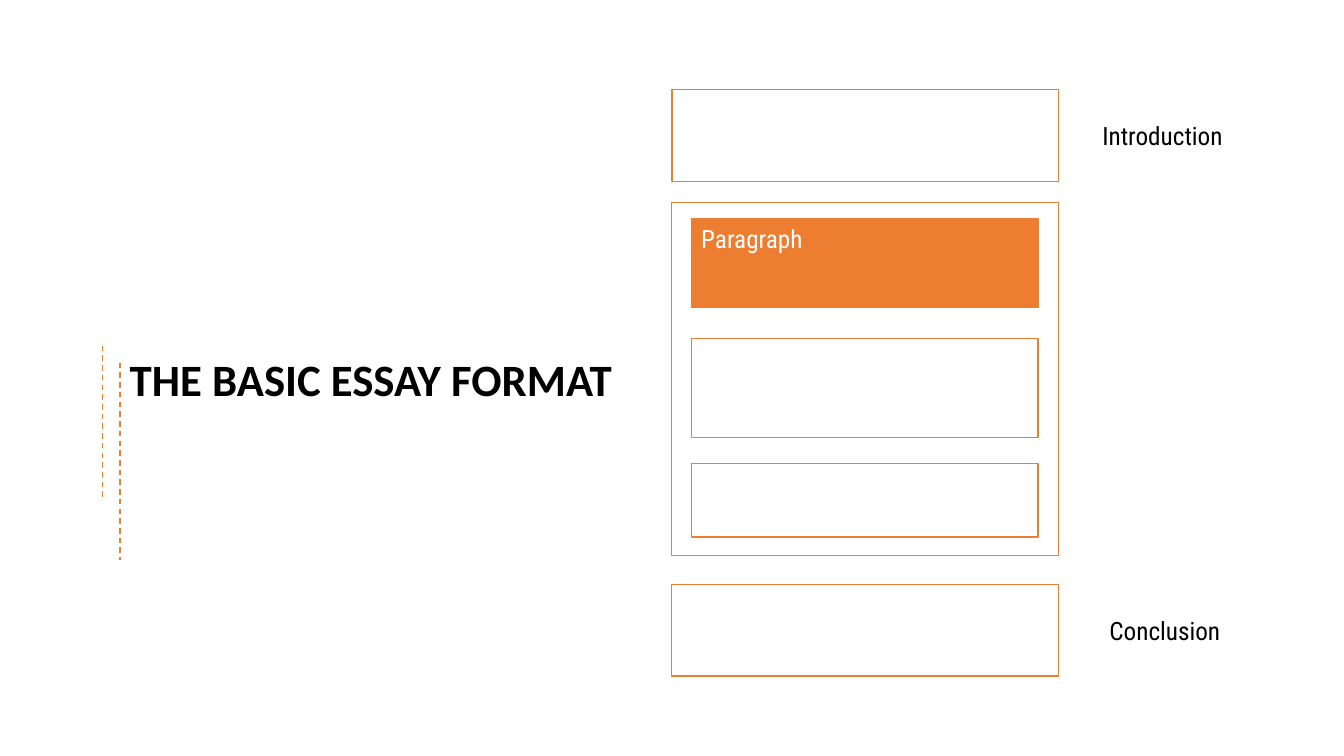
from dataclasses import dataclass

from lxml.etree import SubElement
from pptx import Presentation
from pptx.dml.color import RGBColor
from pptx.enum.dml import MSO_LINE
from pptx.enum.shapes import MSO_CONNECTOR, MSO_SHAPE
from pptx.enum.text import MSO_AUTO_SIZE
from pptx.oxml.ns import qn
from pptx.util import Cm, Pt


@dataclass(frozen=True)
class Theme:
    accent: RGBColor = RGBColor(0xED, 0x7D, 0x31)
    ink: RGBColor = RGBColor(0, 0, 0)
    paper: RGBColor = RGBColor(0xFF, 0xFF, 0xFF)
    title_font: str = "Calibri"
    label_font: str = "Roboto Condensed"
    title_size: Pt = Pt(32)
    label_size: Pt = Pt(18)
    line_width: Pt = Pt(1)


def set_values(target, values):
    for name, value in values.items():
        setattr(target, name, value)


class EssaySlide:
    """Holds the theme and the page that elements are added to."""

    def __init__(self, page, theme):
        self.page = page
        self.theme = theme

    def frame(self, left, top, width, height, fill=None):
        box = self.page.shapes.add_shape(
            MSO_SHAPE.RECTANGLE, Cm(left), Cm(top), Cm(width), Cm(height))
        box.shadow.inherit = False
        box.fill.solid()
        box.fill.fore_color.rgb = fill or self.theme.paper
        self.outline(box.line)

    def outline(self, line):
        line.color.rgb = self.theme.accent
        line.width = self.theme.line_width

    def text(self, words, left, top, width, height, color, **font_values):
        box = self.page.shapes.add_textbox(Cm(left), Cm(top), Cm(width), Cm(height))
        set_values(box.text_frame,
                   {"word_wrap": True, "auto_size": MSO_AUTO_SIZE.SHAPE_TO_FIT_TEXT})
        span = box.text_frame.paragraphs[0].add_run()
        span.text = words
        set_values(span.font, font_values)
        span.font.color.rgb = color

    def title(self, words, left, top, width, height):
        self.text(words, left, top, width, height, self.theme.ink,
                  name=self.theme.title_font, size=self.theme.title_size, bold=True)

    def label(self, words, left, top, color=None):
        self.text(words, left, top, 4.42, 1.02, color or self.theme.ink,
                  name=self.theme.label_font, size=self.theme.label_size)

    def dashed_rule(self, left, top, bottom):
        rule = self.page.shapes.add_connector(
            MSO_CONNECTOR.STRAIGHT, Cm(left), Cm(top), Cm(left), Cm(bottom))
        self.outline(rule.line)
        rule.line.dash_style = MSO_LINE.DASH
        SubElement(rule._element.spPr, qn("a:effectLst"))


def main():
    deck = Presentation()
    set_values(deck, {"slide_width": Cm(33.87), "slide_height": Cm(19.05)})
    theme = Theme()
    essay = EssaySlide(deck.slides.add_slide(deck.slide_layouts[6]), theme)

    essay.title("THE BASIC ESSAY FORMAT", 3.02, 8.74, 12.95, 1.63)

    section_left, section_width = 16.92, 9.75
    essay.frame(16.94, 2.26, 9.73, 2.31)
    for top, height in ((5.11, 8.89), (14.73, 2.31)):
        essay.frame(section_left, top, section_width, height)
    essay.label("Introduction", 27.53, 2.9)
    essay.label("Conclusion", 27.71, 15.37)

    paragraph_left, paragraph_top = 17.42, 5.51
    for top, height, fill in ((paragraph_top, 2.24, theme.accent),
                              (8.53, 2.49, theme.paper),
                              (11.68, 1.85, theme.paper)):
        essay.frame(paragraph_left, top, 8.74, height, fill)
    essay.label("Paragraph", paragraph_left, paragraph_top, theme.paper)

    for left, top, bottom in ((2.59, 8.71, 12.6), (3.02, 9.14, 14.12)):
        essay.dashed_rule(left, top, bottom)

    deck.save("out.pptx")


if __name__ == "__main__":
    main()
